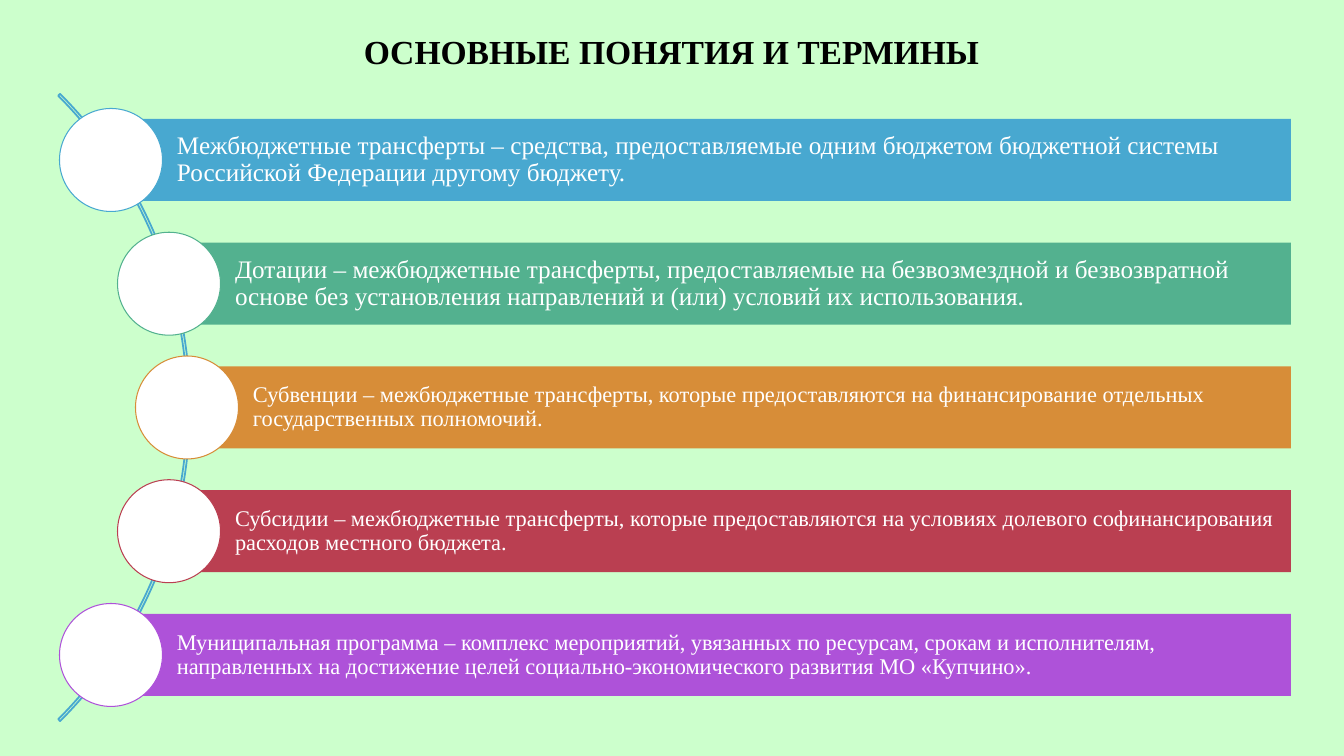
from pptx import Presentation
from pptx.dml.color import RGBColor
from pptx.enum.shapes import MSO_SHAPE
from pptx.enum.text import MSO_ANCHOR, PP_ALIGN
from pptx.util import Inches, Pt

BLUE = RGBColor(0x48, 0xA8, 0xD0)
GREEN = RGBColor(0x53, 0xB1, 0x8F)
ORANGE = RGBColor(0xD7, 0x8D, 0x38)
RED = RGBColor(0xBA, 0x3F, 0x51)
PURPLE = RGBColor(0xAE, 0x52, 0xD9)
WHITE = RGBColor(0xFF, 0xFF, 0xFF)
BLACK = RGBColor(0x00, 0x00, 0x00)
MINT = RGBColor(0xCC, 0xFF, 0xCC)

TITLE = "ОСНОВНЫЕ ПОНЯТИЯ И ТЕРМИНЫ"
# text, colour, circle centre x in px, font size, text margin in px
TERMS = [
    ("Межбюджетные трансферты – средства, предоставляемые одним бюджетом "
     "бюджетной системы Российской Федерации другому бюджету.",
     BLUE, 111, 18, 10),
    ("Дотации – межбюджетные трансферты, предоставляемые на безвозмездной и "
     "безвозвратной основе без установления направлений и (или) условий их "
     "использования.",
     GREEN, 169, 18, 10),
    ("Субвенции – межбюджетные трансферты, которые предоставляются на "
     "финансирование отдельных государственных полномочий.",
     ORANGE, 187, 16, 4),
    ("Субсидии – межбюджетные трансферты, которые предоставляются на условиях "
     "долевого софинансирования расходов местного бюджета.",
     RED, 169, 16, 4),
    ("Муниципальная программа – комплекс мероприятий, увязанных по ресурсам, "
     "срокам и исполнителям, направленных на достижение целей "
     "социально-экономического развития МО «Купчино».",
     PURPLE, 111, 16, 4),
]

PX = Inches(1) / 100.8
FIRST_Y, LAST_Y = 160, 655
BAR_RIGHT, BAR_H, TEXT_INDENT = 1291, 82, 66
CIRCLE_D = 103
ARC_LEFT, ARC_TOP, ARC_D = -697, -36, 887
ARC_ADJUSTMENTS = (189, 27, 0.003)


def px(n):
    return round(n * PX)


def add_shape(s, kind, x, y, w, h, fill=None, line=None, line_pt=0.75):
    sp = s.shapes.add_shape(kind, px(x), px(y), px(w), px(h))
    sp.shadow.inherit = False
    if fill is None:
        sp.fill.background()
    else:
        sp.fill.solid()
        sp.fill.fore_color.rgb = fill
    if line is None:
        sp.line.fill.background()
    else:
        sp.line.color.rgb = line
        sp.line.width = Pt(line_pt)
    return sp


def write(sp, text, color, size, align, frame_format, bold=False):
    tf = sp.text_frame
    for name, value in {"word_wrap": True, **frame_format}.items():
        setattr(tf, name, value)
    p = tf.paragraphs[0]
    p.alignment, p.line_spacing = align, 0.9
    r = p.add_run()
    r.text = text
    font_format = {"name": "Times New Roman", "size": Pt(size), "bold": bold}
    for name, value in font_format.items():
        setattr(r.font, name, value)
    r.font.color.rgb = color


def main():
    prs = Presentation()
    prs.slide_width, prs.slide_height = px(1344), px(756)
    s = prs.slides.add_slide(prs.slide_layouts[6])
    s.background.fill.solid()
    s.background.fill.fore_color.rgb = MINT

    arc = add_shape(s, MSO_SHAPE.BLOCK_ARC, ARC_LEFT, ARC_TOP, ARC_D, ARC_D,
                    line=BLUE, line_pt=1.25)
    for i, value in enumerate(ARC_ADJUSTMENTS):
        arc.adjustments[i] = value

    pitch = (LAST_Y - FIRST_Y) / (len(TERMS) - 1)
    for i, (text, color, x, size, margin) in enumerate(TERMS):
        y = FIRST_Y + i * pitch
        bar = add_shape(s, MSO_SHAPE.RECTANGLE, x, y - BAR_H / 2,
                        BAR_RIGHT - x, BAR_H, fill=color)
        write(bar, text, WHITE, size, PP_ALIGN.LEFT, {
            "vertical_anchor": MSO_ANCHOR.MIDDLE,
            "margin_left": px(TEXT_INDENT),
            "margin_right": px(margin),
            "margin_top": px(margin),
            "margin_bottom": px(margin),
        })
        add_shape(s, MSO_SHAPE.OVAL, x - CIRCLE_D / 2, y - CIRCLE_D / 2,
                  CIRCLE_D, CIRCLE_D, fill=WHITE, line=color)

    title = s.shapes.add_textbox(px(101), px(18), px(1141), px(59))
    write(title, TITLE, BLACK, 24, PP_ALIGN.CENTER,
          {"vertical_anchor": MSO_ANCHOR.BOTTOM}, bold=True)
    prs.save("out.pptx")


if __name__ == "__main__":
    main()
